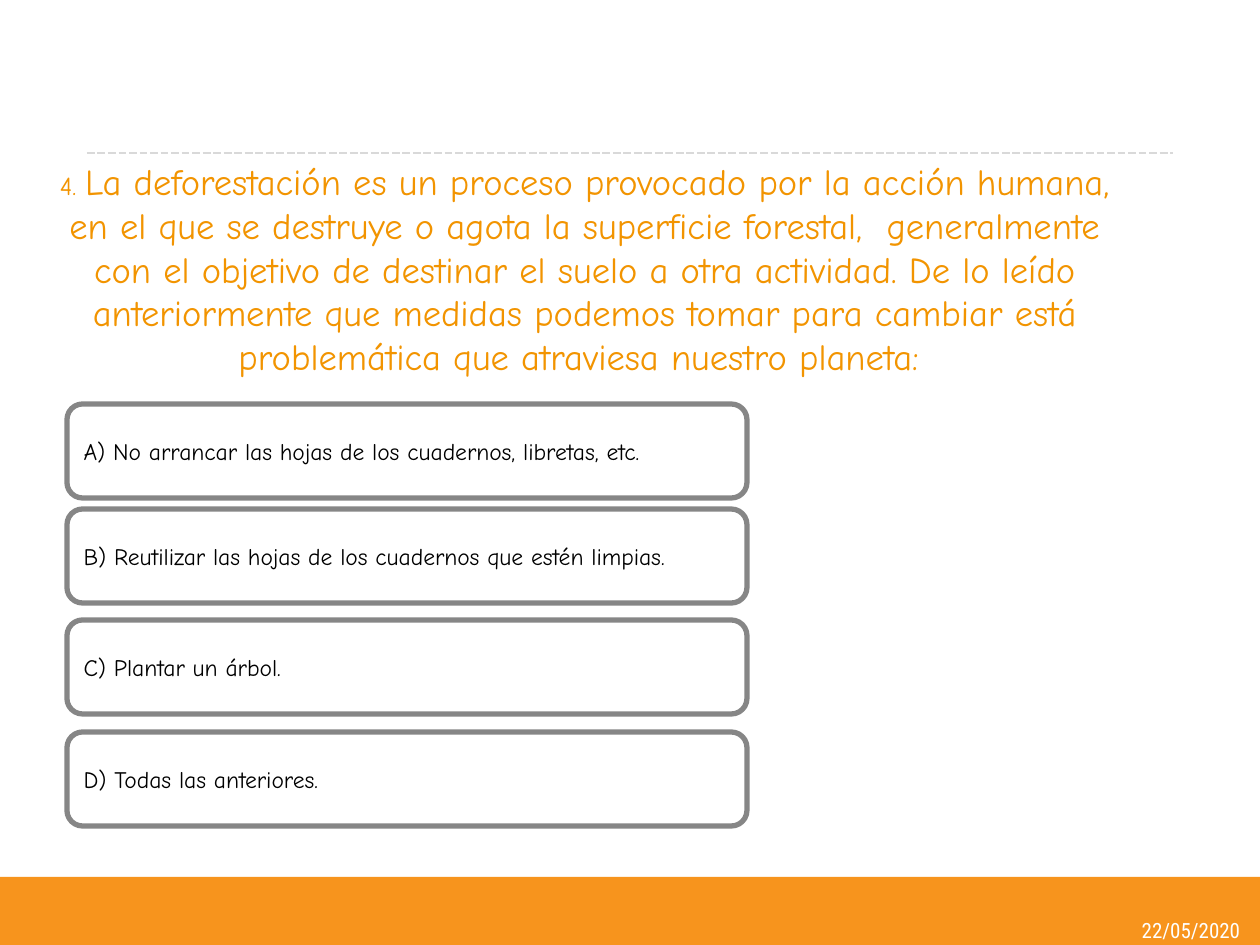
from pptx import Presentation
from pptx.dml.color import RGBColor
from pptx.enum.dml import MSO_LINE
from pptx.enum.shapes import MSO_CONNECTOR, MSO_SHAPE
from pptx.enum.text import MSO_ANCHOR, PP_ALIGN
from pptx.oxml.ns import qn
from pptx.util import Emu, Pt
from lxml.etree import SubElement

# Content
QUESTION = [
    ("4. ", 14.8),
    ("La deforestación es un proceso provocado por la acción humana, en el que se "
     "destruye o agota la superficie forestal,  generalmente con el objetivo de destinar "
     "el suelo a otra actividad. De lo leído anteriormente que medidas podemos tomar "
     "para cambiar está problemática que atraviesa nuestro planeta: ", 20.9),
]
ANSWERS = [  # text, top
    ("A) No arrancar las hojas de los cuadernos, libretas, etc.", 404),
    ("B) Reutilizar las hojas de los cuadernos que estén limpias.", 509),
    ("C) Plantar un árbol.", 620),
    ("D) Todas las anteriores.", 732),
]
DATE = "22/05/2020"

# Style
ORANGE = RGBColor(0xF7, 0x94, 0x1D)
TITLE_ORANGE = RGBColor(0xF2, 0x94, 0x00)
GRAY = RGBColor(0x86, 0x86, 0x86)
LIGHT_GRAY = RGBColor(0xD9, 0xD9, 0xD9)
WHITE = RGBColor(0xFF, 0xFF, 0xFF)
BLACK = RGBColor(0x00, 0x00, 0x00)
BODY_FONT = "Comic Neue"
DATE_FONT = "Roboto Condensed"
SLIDE_WIDTH, SLIDE_HEIGHT = 1260, 945


def px(value):
    return Emu(value * 914400 // 126)


def write(box, runs, font, color, align, insets):
    frame = box.text_frame
    frame.word_wrap = True
    frame.vertical_anchor = MSO_ANCHOR.MIDDLE
    left, top, right, bottom = map(px, insets)
    frame.margin_left, frame.margin_top = left, top
    frame.margin_right, frame.margin_bottom = right, bottom
    para = frame.paragraphs[0]
    para.alignment = align
    for text, size in runs:
        span = para.add_run()
        span.text = text
        span.font.name = font
        span.font.size = Pt(size)
        span.font.color.rgb = color


def add_box(page, kind, left, top, width, height, fill, line=None):
    box = page.shapes.add_shape(kind, px(left), px(top), px(width), px(height))
    box.shadow.inherit = False
    box.fill.solid()
    box.fill.fore_color.rgb = fill
    if line is None:
        box.line.fill.background()
    else:
        box.line.color.rgb = line
        box.line.width = Pt(3)
    return box


deck = Presentation()
deck.slide_width, deck.slide_height = px(SLIDE_WIDTH), px(SLIDE_HEIGHT)
page = deck.slides.add_slide(deck.slide_layouts[6])

# Footer band and date
add_box(page, MSO_SHAPE.RECTANGLE, 0, 877, SLIDE_WIDTH, 70, ORANGE)
date = page.shapes.add_textbox(px(1124), px(917), px(134), px(27))
write(date, [(DATE, 12)], DATE_FONT, WHITE, PP_ALIGN.CENTER, (0, 0, 0, 0))

# Dashed rule
rule = page.shapes.add_connector(MSO_CONNECTOR.STRAIGHT, px(87), px(153), px(1173), px(153))
rule.line.color.rgb = LIGHT_GRAY
rule.line.width = Pt(1.5)
rule.line.dash_style = MSO_LINE.SQUARE_DOT
SubElement(rule._element.spPr, qn("a:effectLst"))

# Question, raised by its bottom inset
question = page.shapes.add_textbox(px(42), px(213), px(1086), px(199))
write(question, QUESTION, BODY_FONT, TITLE_ORANGE, PP_ALIGN.CENTER, (12, 0, 12, 88))

# Answers
for answer, top in ANSWERS:
    box = add_box(page, MSO_SHAPE.ROUNDED_RECTANGLE, 67, top, 680, 94, WHITE, GRAY)
    write(box, [(answer, 13.5)], BODY_FONT, BLACK, PP_ALIGN.JUSTIFY, (12, 6, 12, 6))

deck.save("out.pptx")
